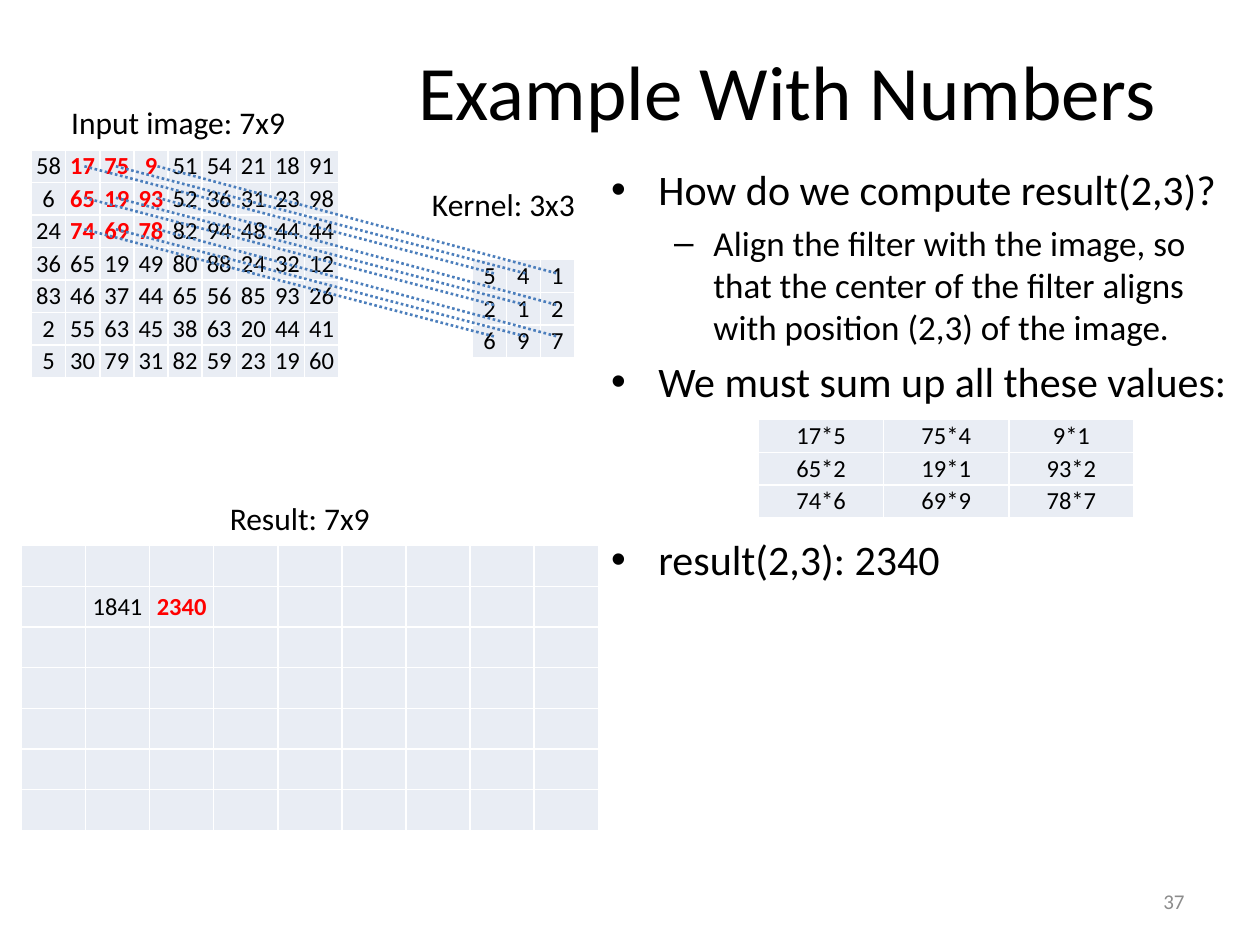
from itertools import product

from lxml.etree import SubElement
from pptx import Presentation
from pptx.dml.color import RGBColor
from pptx.enum.dml import MSO_LINE as Dash
from pptx.enum.shapes import MSO_CONNECTOR as Link
from pptx.enum.text import MSO_ANCHOR as Anchor, MSO_AUTO_SIZE as Fit, PP_ALIGN as Align
from pptx.oxml.ns import qn
from pptx.util import Inches, Pt

BLACK = RGBColor(0x00, 0x00, 0x00)
RED = RGBColor(0xFF, 0x00, 0x00)
GRAY = RGBColor(0x8C, 0x8C, 0x8C)
BLUE = RGBColor(0x4B, 0x7E, 0xBC)
PALE = RGBColor(0xE9, 0xED, 0xF4)

INPUT = [
    [58, 17, 75, 9, 51, 54, 21, 18, 91],
    [6, 65, 19, 93, 52, 36, 31, 23, 98],
    [24, 74, 69, 78, 82, 94, 48, 44, 44],
    [36, 65, 19, 49, 80, 88, 24, 32, 12],
    [83, 46, 37, 44, 65, 56, 85, 93, 26],
    [2, 55, 63, 45, 38, 63, 20, 44, 41],
    [5, 30, 79, 31, 82, 59, 23, 19, 60],
]
KERNEL = [[5, 4, 1], [2, 1, 2], [6, 9, 7]]
WINDOW = set(product(range(3), range(1, 4)))  # input cells under the kernel
TERMS = [[f"{INPUT[r][c + 1]}*{KERNEL[r][c]}" for c in range(3)] for r in range(3)]
RESULT = [[""] * 9 for _ in range(7)]
RESULT[1][1:3] = [1841, 2340]

# level, size, space before, text; the last gap leaves room for the table of terms
POINTS = [
    (0, 24, None, "How do we compute result(2,3)?"),
    (1, 20, None, "Align the filter with the image, so that the center of the "
                  "filter aligns with position (2,3) of the image."),
    (0, 24, None, "We must sum up all these values:"),
    (0, 24, 73, "result(2,3): 2340"),
]


class Board:
    """Holds the style and the current slide."""

    face = "Calibri"

    def __init__(self, slide):
        self.slide = slide
        self.shapes = slide.shapes

    def style(self, para, size, color=BLACK, bold=None, align=None):
        font = para.font
        font.name, font.size, font.bold = self.face, Pt(size), bold
        font.color.rgb = color
        if align is not None:
            para.alignment = align

    def place(self, shape, x, y, w, h):
        shape.left, shape.top = Inches(x), Inches(y)
        shape.width, shape.height = Inches(w), Inches(h)

    def title(self, text, *box):
        shape = self.shapes.title
        self.place(shape, *box)
        shape.text_frame.text = text
        self.style(shape.text_frame.paragraphs[0], 44, align=Align.CENTER)

    def points(self, items, *box):
        shape = self.slide.placeholders[1]
        self.place(shape, *box)
        frame = shape.text_frame
        for i, (level, size, gap, text) in enumerate(items):
            para = frame.add_paragraph() if i else frame.paragraphs[0]
            para.text, para.level = text, level
            self.style(para, size)
            if gap:
                para.space_before = Pt(gap)

    def label(self, text, x, y, w, size=18, color=BLACK, align=Align.CENTER, wrap=False):
        frame = self.shapes.add_textbox(Inches(x), Inches(y), Inches(w), Inches(0.4)).text_frame
        frame.word_wrap = wrap
        frame.auto_size = Fit.NONE if wrap else Fit.SHAPE_TO_FIT_TEXT
        frame.vertical_anchor = Anchor.MIDDLE if wrap else Anchor.TOP
        frame.text = text
        self.style(frame.paragraphs[0], size, color, align=align)

    def grid(self, rows, x, y, w, h, marks=()):
        """Draw a table of equal cells; those listed in marks are bold red."""
        table = self.shapes.add_table(len(rows), len(rows[0]), Inches(x), Inches(y),
                                      Inches(w), Inches(h)).table
        table.first_row = table.horz_banding = False
        for r, row in enumerate(rows):
            for c, value in enumerate(row):
                cell = table.cell(r, c)
                cell.fill.solid()
                cell.fill.fore_color.rgb = PALE
                cell.margin_left = cell.margin_right = 0
                cell.margin_top = cell.margin_bottom = 0
                cell.vertical_anchor = Anchor.MIDDLE
                cell.text = str(value)
                hit = (r, c) in marks
                self.style(cell.text_frame.paragraphs[0], 14, RED if hit else BLACK,
                           hit, Align.CENTER)

    def dots(self, x1, y1, x2, y2):
        line = self.shapes.add_connector(Link.STRAIGHT, Inches(x1), Inches(y1),
                                         Inches(x2), Inches(y2))
        line.line.color.rgb = BLUE
        line.line.width = Pt(1.5)
        line.line.dash_style = Dash.ROUND_DOT
        SubElement(line._element.spPr, qn("a:effectLst"))


def main():
    deck = Presentation()
    deck.slide_width, deck.slide_height = Inches(10), Inches(7.5)
    board = Board(deck.slides.add_slide(deck.slide_layouts[1]))

    board.title("Example With Numbers", 3, 0.17, 6.5, 1.08)
    board.points(POINTS, 4.75, 1.25, 5.1, 5.67)
    board.label("37", 7.17, 6.95, 2.33, 12, GRAY, Align.RIGHT, wrap=True)

    board.grid(RESULT, 0.17, 4.33, 4.58, 2.26, {(1, 2)})
    board.label("Result: 7x9", 1.65, 3.91, 1.46)
    board.grid(INPUT, 0.25, 1.19, 2.44, 1.81, WINDOW)
    board.grid(KERNEL, 3.75, 2.06, 0.81, 0.78)
    board.label("Input image: 7x9", 0.38, 0.77, 2.07)
    board.label("Kernel: 3x3", 3.33, 1.42, 1.35, align=Align.LEFT)

    for row, (col, start) in product(range(3), enumerate((0.67, 0.92, 1.25))):
        top = 1.32 + 0.25 * row
        board.dots(start, top, 3.92 + 0.25 * col, top + 0.85)

    board.grid(TERMS, 6.02, 3.33, 2.98, 0.78)
    deck.save("out.pptx")


if __name__ == "__main__":
    main()
